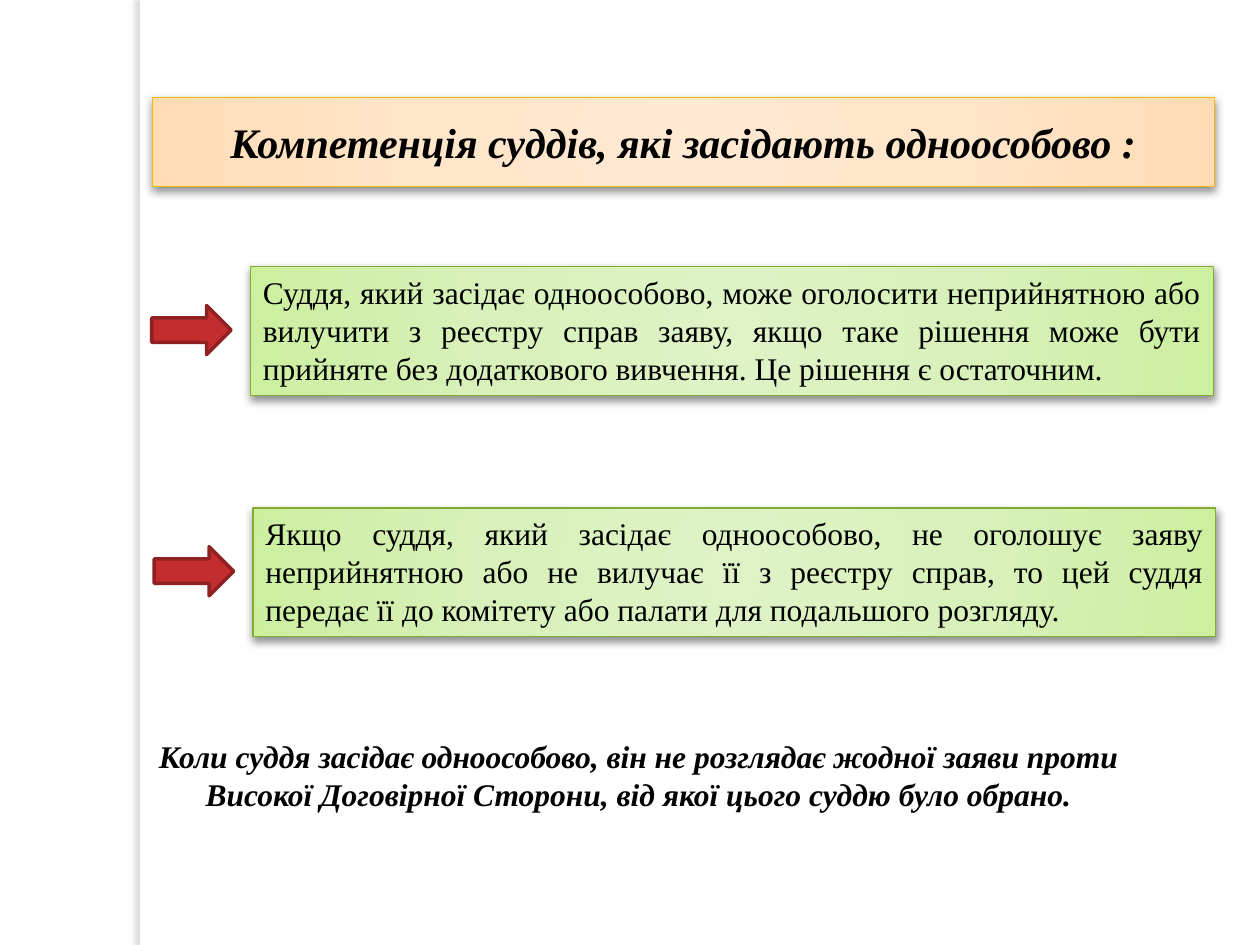
"""Build the slide on the competence of judges sitting alone."""
from dataclasses import dataclass

import pptx
import pptx.dml.color
import pptx.enum.shapes
import pptx.enum.text
import pptx.oxml
import pptx.oxml.ns
import pptx.util

Cm = pptx.util.Cm
Pt = pptx.util.Pt
RGBColor = pptx.dml.color.RGBColor
Preset = pptx.enum.shapes.MSO_SHAPE
Align = pptx.enum.text.PP_ALIGN
Anchor = pptx.enum.text.MSO_ANCHOR

WHITE = RGBColor(0xFF, 0xFF, 0xFF)
BLACK = RGBColor(0x00, 0x00, 0x00)
STRIP_SHADE = RGBColor(0x73, 0x6F, 0x63)
AMBER = RGBColor(0xFE, 0xB8, 0x0A)
GREEN = RGBColor(0x84, 0xAA, 0x33)
RED = RGBColor(0xC3, 0x2D, 0x2E)
DARK_RED = RGBColor(0x90, 0x21, 0x22)
PEACH_GLOW = {0: RGBColor(0xFF, 0xE9, 0xD3), 50: RGBColor(0xFF, 0xE5, 0xC9),
              97: RGBColor(0xFF, 0xDD, 0xB7), 100: RGBColor(0xFF, 0xDB, 0xB2)}
LIME_GLOW = {0: RGBColor(0xDF, 0xF3, 0xC7), 50: RGBColor(0xD8, 0xF1, 0xBA),
             97: RGBColor(0xCD, 0xEF, 0xA2), 100: RGBColor(0xCA, 0xF1, 0x99)}
FONT = "Times New Roman"


@dataclass(frozen=True)
class Box:
    left: float
    top: float
    width: float
    height: float

    def lengths(self) -> list[pptx.util.Length]:
        return [Cm(side) for side in (self.left, self.top, self.width, self.height)]


@dataclass(frozen=True)
class Shadow:
    color: RGBColor
    opacity: int
    blur: float
    distance: float
    angle: int


@dataclass(frozen=True)
class Rule:
    text: str
    left: float
    top: float


SOFT_SHADOW = Shadow(BLACK, 43, 5, 2, 90)
STRIP_SHADOW = Shadow(STRIP_SHADE, 25, 3, 3, 180)
RULES = [
    Rule("Суддя, який засідає одноособово, може оголосити неприйнятною або вилучити "
         "з реєстру справ заяву, якщо таке рішення може бути прийняте без додаткового "
         "вивчення. Це рішення є остаточним.", 3.06, 5.38),
    Rule("Якщо суддя, який засідає одноособово, не оголошує заяву неприйнятною або не "
         "вилучає її з реєстру справ, то цей суддя передає її до комітету або палати "
         "для подальшого розгляду.", 3.11, 10.24),
]


def write(shape, text: str, *, size: int = 18, align=Align.CENTER,
          anchor=Anchor.TOP, emphasis: bool = False) -> None:
    frame = shape.text_frame
    frame.word_wrap = True
    frame.vertical_anchor = anchor
    paragraph = frame.paragraphs[0]
    paragraph.alignment = align
    run = paragraph.add_run()
    run.text = text
    run.font.name = FONT
    run.font.size = Pt(size)
    run.font.bold = run.font.italic = emphasis
    run.font.color.rgb = BLACK


def add_preset(slide, preset, box: Box, fill: RGBColor, line: RGBColor | None,
               line_width: float = 0.75):
    shape = slide.shapes.add_shape(preset, *box.lengths())
    shape.shadow.inherit = False
    shape.fill.solid()
    shape.fill.fore_color.rgb = fill
    if line is None:
        shape.line.fill.background()
    else:
        shape.line.color.rgb = line
        shape.line.width = Pt(line_width)
    return shape


def cast_shadow(shape, shadow: Shadow) -> None:
    effects = shape._element.spPr.find(pptx.oxml.ns.qn("a:effectLst"))
    effects.append(pptx.oxml.parse_xml(
        f'<a:outerShdw {pptx.oxml.ns.nsdecls("a")} blurRad="{Pt(shadow.blur)}" '
        f'dist="{Pt(shadow.distance)}" dir="{shadow.angle * 60000}" rotWithShape="0">'
        f'<a:srgbClr val="{shadow.color}"><a:alpha val="{shadow.opacity * 1000}"/>'
        '</a:srgbClr></a:outerShdw>'))


def add_panel(slide, box: Box, glow: dict[int, RGBColor], line: RGBColor):
    panel = add_preset(slide, Preset.RECTANGLE, box, glow[0], line)
    stops = "".join(f'<a:gs pos="{place * 1000}"><a:srgbClr val="{color}"/></a:gs>'
                    for place, color in glow.items())
    properties = panel._element.spPr
    properties.replace(
        properties.find(pptx.oxml.ns.qn("a:solidFill")),
        pptx.oxml.parse_xml(
            f'<a:gradFill {pptx.oxml.ns.nsdecls("a")} rotWithShape="1">'
            f'<a:gsLst>{stops}</a:gsLst><a:path path="circle">'
            '<a:fillToRect l="50000" t="50000" r="50000" b="50000"/>'
            '</a:path></a:gradFill>'))
    cast_shadow(panel, SOFT_SHADOW)
    return panel


def add_rule(slide, rule: Rule) -> None:
    panel = add_panel(slide, Box(rule.left + 1.99, rule.top, 19.41, 2.59),
                      LIME_GLOW, GREEN)
    write(panel, rule.text, align=Align.JUSTIFY)
    add_preset(slide, Preset.RIGHT_ARROW, Box(rule.left, rule.top + 0.78, 1.6, 0.99),
               RED, DARK_RED, line_width=2)


def main() -> None:
    deck = pptx.Presentation()
    deck.slide_width, deck.slide_height = Cm(25.4), Cm(19.05)
    slide = deck.slides.add_slide(deck.slide_layouts[6])
    slide.background.fill.solid()
    slide.background.fill.fore_color.rgb = WHITE

    strip = add_preset(slide, Preset.RECTANGLE, Box(2.82, 0, 0.2, 19.05), WHITE, None)
    cast_shadow(strip, STRIP_SHADOW)

    heading = add_panel(slide, Box(3.07, 1.96, 21.41, 1.8), PEACH_GLOW, AMBER)
    write(heading, "Компетенція суддів, які засідають одноособово :",
          size=24, anchor=Anchor.MIDDLE, emphasis=True)
    for rule in RULES:
        add_rule(slide, rule)

    exception = slide.shapes.add_textbox(*Box(2.31, 14.73, 21.13, 1.8).lengths())
    write(exception, "Коли суддя засідає одноособово, він не розглядає жодної заяви "
          "проти Високої Договірної Сторони, від якої цього суддю було обрано.",
          emphasis=True)
    exception.text_frame.auto_size = pptx.enum.text.MSO_AUTO_SIZE.SHAPE_TO_FIT_TEXT

    deck.save("out.pptx")


if __name__ == "__main__":
    main()
